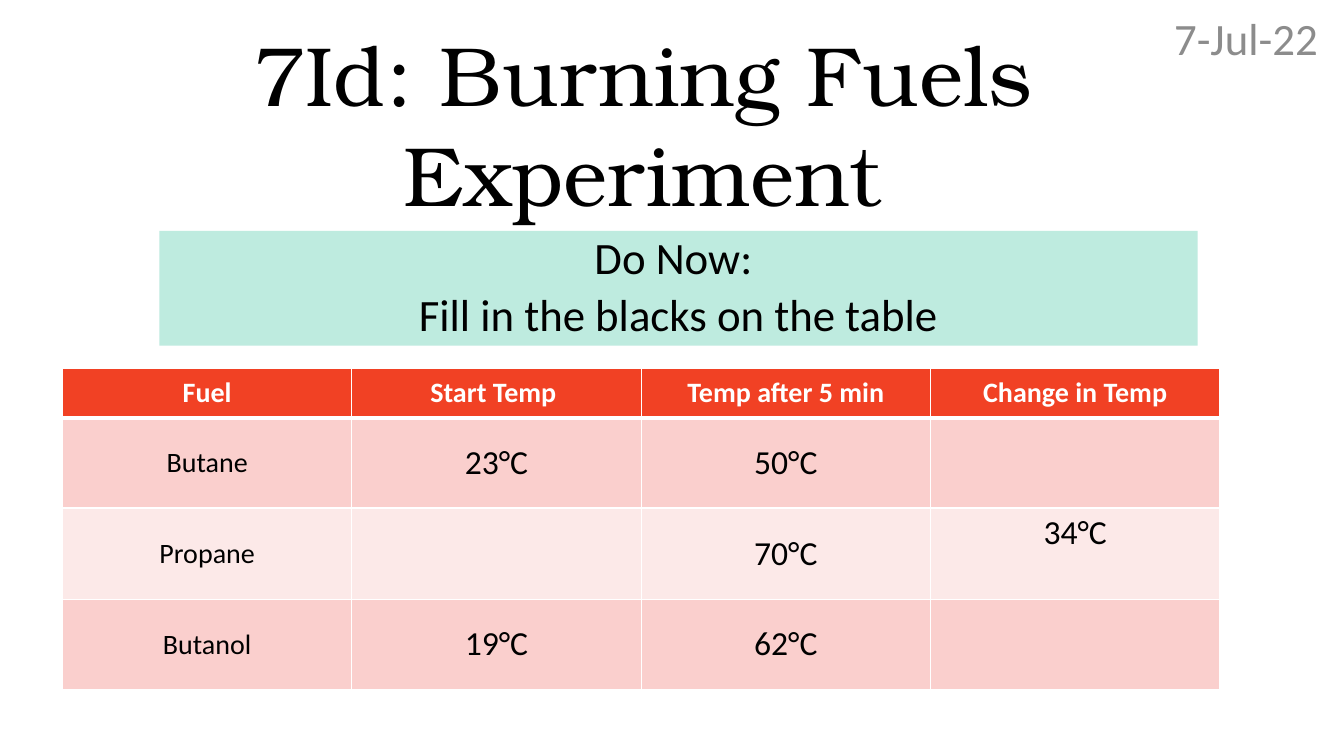
from dataclasses import dataclass

from lxml.etree import SubElement
from pptx import Presentation
from pptx.dml.color import RGBColor
from pptx.enum.shapes import MSO_SHAPE
from pptx.enum.text import MSO_ANCHOR, PP_ALIGN
from pptx.oxml.ns import qn
from pptx.util import Pt


@dataclass(frozen=True)
class Theme:
    body: str = "Calibri"
    serif: str = "TeX Gyre Bonum"
    black: str = "000000"
    white: str = "FFFFFF"
    gray: str = "8C8C8C"
    mint: str = "BEEBDF"
    red: str = "F14124"
    pink: str = "FACFCD"
    pale: str = "FCE9E8"
    title: int = 60
    lead: int = 32
    value: int = 24
    label: int = 20


THEME = Theme()
SCALE = 9144


def px(*sizes):
    return [size * SCALE for size in sizes]


def paint(fill, color):
    fill.solid()
    fill.fore_color.rgb = RGBColor.from_string(color)


def write(frame, text, size, font=THEME.body, color=THEME.black, bold=False,
          align=PP_ALIGN.CENTER, anchor=MSO_ANCHOR.TOP, line=None, before=None):
    frame.word_wrap = True
    frame.vertical_anchor = anchor
    frame.text = text
    for para in frame.paragraphs:
        para.alignment = align
        para.line_spacing = line
        para.space_before = before
        for run in para.runs:
            run.font.name = font
            run.font.size = Pt(size)
            run.font.bold = bold
            run.font.color.rgb = RGBColor.from_string(color)


class Deck:
    """Draws styled elements on the current slide."""

    def __init__(self, theme):
        self.theme = theme
        self.file = Presentation()
        self.file.slide_width, self.file.slide_height = px(1333, 750)
        self.slide = self.file.slides.add_slide(self.file.slide_layouts[6])

    def label(self, box, text, size, **style):
        shape = self.slide.shapes.add_textbox(*px(*box))
        write(shape.text_frame, text, size, **style)

    def panel(self, box, text, size, fill, **style):
        shape = self.slide.shapes.add_shape(MSO_SHAPE.RECTANGLE, *px(*box))
        shape.shadow.inherit = False
        paint(shape.fill, fill)
        shape.line.fill.background()
        write(shape.text_frame, text, size, **style)

    def edge(self, cell, top, base):
        props = cell._tc.get_or_add_tcPr()
        for side, width in zip("LRTB", (1, 1, top, base)):
            line = SubElement(props, qn(f"a:ln{side}"), w=str(Pt(width)))
            fill = SubElement(line, qn("a:solidFill"))
            SubElement(fill, qn("a:srgbClr"), val=self.theme.white)

    def table(self, left, top, width, heights, rows):
        theme = self.theme
        count = len(rows[0])
        frame = self.slide.shapes.add_table(
            len(rows), count, *px(left, top, width * count, sum(heights)))
        grid = frame.table
        for col in grid.columns:
            col.width = width * SCALE
        for i, (row, height) in enumerate(zip(rows, heights)):
            grid.rows[i].height = height * SCALE
            head = i == 0
            shade = theme.red if head else theme.pink if i % 2 else theme.pale
            for j, text in enumerate(row):
                cell = grid.cell(i, j)
                self.edge(cell, 3 if i == 1 else 1, 3 if head else 1)
                paint(cell.fill, shade)
                write(cell.text_frame, text,
                      theme.label if head or j == 0 else theme.value,
                      color=theme.white if head else theme.black, bold=head)
                last = not head and j == count - 1
                cell.vertical_anchor = MSO_ANCHOR.TOP if last else MSO_ANCHOR.MIDDLE

    def save(self):
        self.file.save("out.pptx")


def main():
    deck = Deck(THEME)
    deck.label((1017, 17, 300, 40), "7-Jul-22", THEME.lead, color=THEME.gray,
               align=PP_ALIGN.RIGHT, anchor=MSO_ANCHOR.MIDDLE)
    deck.label((21, 17, 1233, 212), "7Id: Burning Fuels Experiment",
               THEME.title, font=THEME.serif)
    deck.panel((158, 229, 1030, 114),
               "Do Now: \nFill in the blacks on the table", THEME.lead,
               THEME.mint, line=0.9, before=Pt(6))
    deck.table(62, 365, 287, (50, 89, 91, 89), [
        ("Fuel", "Start Temp ", "Temp after 5 min", "Change in Temp"),
        ("Butane", "23°C", "50°C", ""),
        ("Propane", "", "70°C", "34°C"),
        ("Butanol", "19°C", "62°C", ""),
    ])
    deck.save()


if __name__ == "__main__":
    main()
